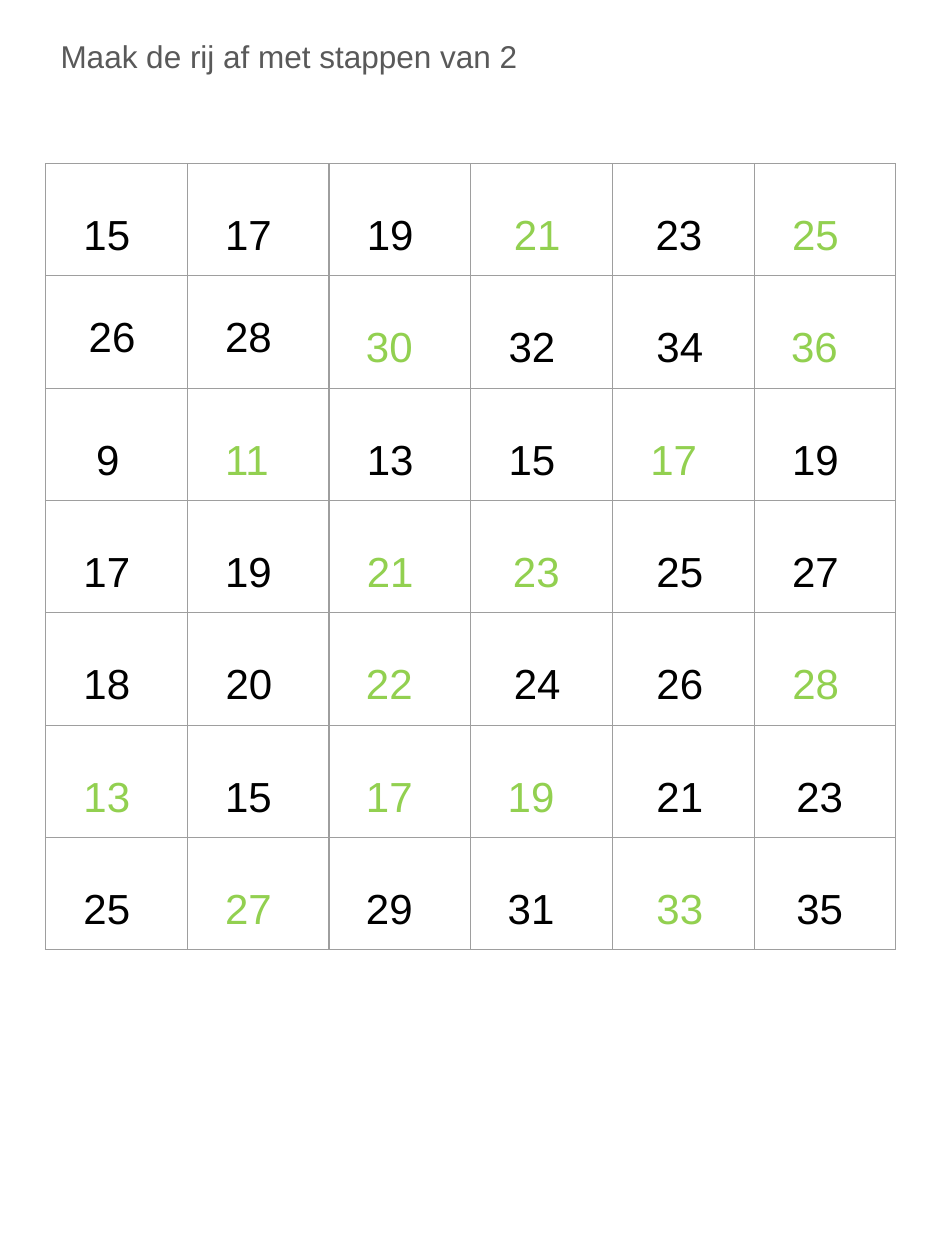
from lxml.etree import SubElement
from pptx import Presentation
from pptx.dml.color import RGBColor
from pptx.enum.text import MSO_ANCHOR as Anchor, MSO_AUTO_SIZE as AutoSize, PP_ALIGN as Align
from pptx.oxml.ns import qn
from pptx.util import Pt

BLACK = RGBColor(0x00, 0x00, 0x00)
GREEN = RGBColor(0x92, 0xD0, 0x50)
GREY = RGBColor(0x59, 0x59, 0x59)
BORDER = RGBColor(0x9E, 0x9E, 0x9E)

STEP = 2
COLUMNS = 6
INSET = 7.2
LOW_TOP, HIGH_TOP = 28, 22.2
HIGH_CELLS = {(1, 0), (1, 1)}

# fmt: first number, answer columns, indent of each number
SEQUENCES = [
    (15, {3, 5}, [14.5, 14.5, 14.5, 17.5, 17.5, 14.5]),
    (26, {2, 5}, [17.5, 14.5, 14, 14.5, 18, 14]),
    (9, {1, 4}, [21.7, 14.5, 14.5, 14.5, 14.5, 14.5]),
    (17, {2, 3}, [14.5, 14.5, 14.5, 17, 18, 14.5]),
    (18, {2, 5}, [14.5, 14.7, 14, 17.5, 18, 14.7]),
    (13, {0, 2, 3}, [14.5, 14.5, 14, 14, 18, 17]),
    (25, {1, 4}, [14.5, 14.5, 14, 14, 18, 17]),
]


def apply_format(target, values):
    """Set every attribute named in values on the target."""
    for name, value in values.items():
        setattr(target, name, value)


def write_text(para, text, size, color):
    """Add one left-aligned Arial run to the paragraph."""
    para.alignment = Align.LEFT
    span = para.add_run()
    span.text = text
    apply_format(span.font, {"name": "Arial", "size": Pt(size), "bold": False})
    span.font.color.rgb = color


def outline_cell(cell):
    """Draw a thin border on all four sides of the cell."""
    properties = cell._tc.get_or_add_tcPr()
    for side in ("a:lnL", "a:lnR", "a:lnT", "a:lnB"):
        line = SubElement(properties, qn(side), w=str(Pt(0.75)))
        fill = SubElement(line, qn("a:solidFill"))
        SubElement(fill, qn("a:srgbClr"), val=str(BORDER))
    cell.fill.background()


def place_heading(page, left, top, width, height):
    """Put the instruction in the title placeholder."""
    box = page.shapes.title
    apply_format(box, {"left": Pt(left), "top": Pt(top), "width": Pt(width), "height": Pt(height)})
    apply_format(box.text_frame, {
        "word_wrap": True, "auto_size": AutoSize.NONE, "vertical_anchor": Anchor.TOP,
    })
    write_text(box.text_frame.paragraphs[0], "Maak de rij af met stappen van 2", 18, GREY)


def place_sequences(page, left, top, width, height):
    """Fill a table with one number sequence per row, answers in green."""
    frame = page.shapes.add_table(
        len(SEQUENCES), COLUMNS, Pt(left), Pt(top), Pt(width), Pt(height))
    table = frame.table
    apply_format(table, {"first_row": False, "horz_banding": False})
    for column in table.columns:
        column.width = Pt(width / COLUMNS)
    for row in table.rows:
        row.height = Pt(height / len(SEQUENCES))
    for row_index, (start, answers, indents) in enumerate(SEQUENCES):
        for column_index, indent in enumerate(indents):
            cell = table.cell(row_index, column_index)
            is_high = (row_index, column_index) in HIGH_CELLS
            apply_format(cell, {
                "margin_left": Pt(INSET + indent),
                "margin_right": Pt(INSET),
                "margin_top": Pt(HIGH_TOP if is_high else LOW_TOP),
                "margin_bottom": Pt(INSET),
                "vertical_anchor": Anchor.TOP,
            })
            color = GREEN if column_index in answers else BLACK
            number = str(start + STEP * column_index)
            write_text(cell.text_frame.paragraphs[0], number, 24, color)
            outline_cell(cell)


def main():
    """Build the worksheet and save it."""
    deck = Presentation()
    apply_format(deck, {"slide_width": Pt(540), "slide_height": Pt(720)})
    page = deck.slides.add_slide(deck.slide_layouts[5])
    place_sequences(page, 26, 93.5, 486, 449.4)
    place_heading(page, 27.4, 17.3, 327.6, 72.7)
    deck.save("out.pptx")


if __name__ == "__main__":
    main()
